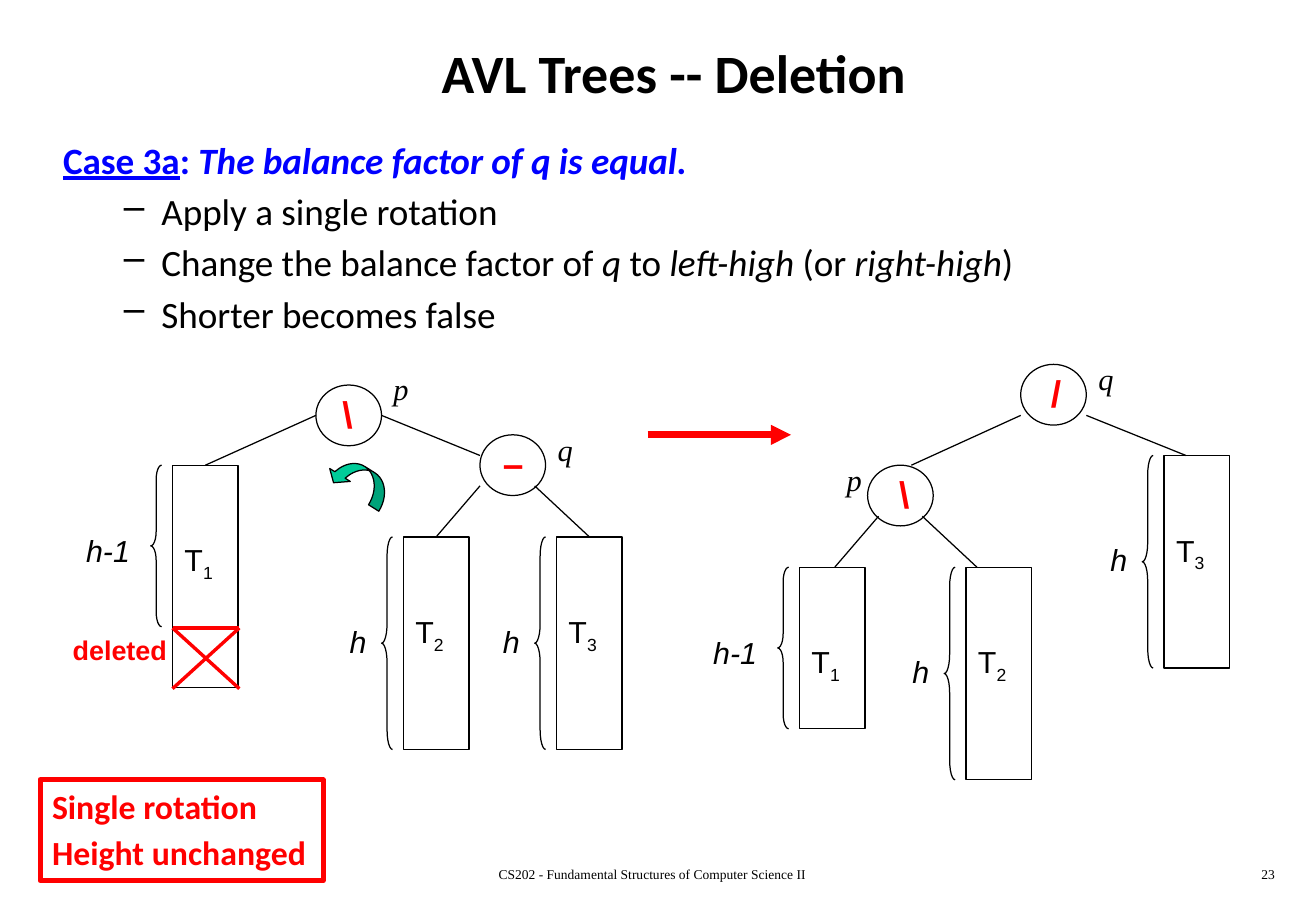
from pptx import Presentation
from pptx.dml.color import RGBColor
from pptx.enum.shapes import MSO_CONNECTOR, MSO_SHAPE
from pptx.enum.text import MSO_ANCHOR, PP_ALIGN
from pptx.oxml.ns import qn
from pptx.util import Inches, Pt
from lxml import etree

BLACK = RGBColor(0x00, 0x00, 0x00)
WHITE = RGBColor(0xFF, 0xFF, 0xFF)
RED = RGBColor(0xFF, 0x00, 0x00)
BLUE = RGBColor(0x00, 0x00, 0xFF)
GREEN = RGBColor(0x00, 0xCC, 0x99)

STRAIGHT = MSO_CONNECTOR.STRAIGHT
RECTANGLE = MSO_SHAPE.RECTANGLE
ELLIPSE = MSO_SHAPE.OVAL
LEFT_BRACE = MSO_SHAPE.LEFT_BRACE
CURVED_ARROW = MSO_SHAPE.CURVED_LEFT_ARROW
TOP, MIDDLE = MSO_ANCHOR.TOP, MSO_ANCHOR.MIDDLE
LEFT, CENTER, RIGHT = PP_ALIGN.LEFT, PP_ALIGN.CENTER, PP_ALIGN.RIGHT

BOX_WIDTH = 0.54
TITLE_ONLY = 5


def format_font(font, size, name="Calibri", color=BLACK, bold=False, italic=False):
    font.size = Pt(size)
    font.name = name
    font.color.rgb = color
    font.bold = bold
    font.italic = italic


def add_text(slide, left, top, width, height, text, size, name="Arial",
             color=BLACK, bold=False, italic=False, align=LEFT):
    text_box = slide.shapes.add_textbox(
        Inches(left), Inches(top), Inches(width), Inches(height))
    text_box.text_frame.word_wrap = True
    paragraph = text_box.text_frame.paragraphs[0]
    paragraph.text = text
    paragraph.alignment = align
    format_font(paragraph.runs[0].font, size, name, color, bold, italic)
    return paragraph


def add_shape(slide, kind, left, top, width, height, fill=None, color=BLACK, weight=0.75):
    shape = slide.shapes.add_shape(
        kind, Inches(left), Inches(top), Inches(width), Inches(height))
    shape.shadow.inherit = False
    if fill is None:
        shape.fill.background()
    else:
        shape.fill.solid()
        shape.fill.fore_color.rgb = fill
    shape.line.color.rgb = color
    shape.line.width = Pt(weight)
    return shape


def add_line(slide, start_x, start_y, end_x, end_y, color=BLACK, weight=0.75, arrow=False):
    connector = slide.shapes.add_connector(
        STRAIGHT, Inches(start_x), Inches(start_y), Inches(end_x), Inches(end_y))
    connector.line.color.rgb = color
    connector.line.width = Pt(weight)
    if arrow:
        etree.SubElement(connector.line._get_or_add_ln(), qn("a:tailEnd"), type="triangle")
    etree.SubElement(connector._element.spPr, qn("a:effectLst"))


def add_node(slide, left, top, balance, balance_shift, name, name_shift):
    add_shape(slide, ELLIPSE, left, top, BOX_WIDTH, 0.5)
    add_text(slide, left + balance_shift, top, 0.45, 0.47, balance, 22, color=RED, bold=True)
    shift_x, shift_y = name_shift
    add_text(slide, left + shift_x, top + shift_y, 0.63, 0.4, name, 18,
             "Times New Roman", italic=True)


def add_subtree(slide, left, top, number, height_name, extra=0):
    is_short = height_name == "h-1"
    height = 1.33 if is_short else 1.75
    add_shape(slide, RECTANGLE, left, top, BOX_WIDTH, height + extra)
    brace = add_shape(slide, LEFT_BRACE, left - 0.18, top, 0.09, height)
    brace.adjustments[0] = height
    label = add_text(slide, left, top + 0.58, BOX_WIDTH, 0.4, "T", 18)
    subscript = label.add_run()
    subscript.text = number
    format_font(subscript.font, 18, "Arial")
    subscript._r.get_or_add_rPr().set("baseline", "-25000")
    shift_x, shift_y, width = (0.81, 0.5, 0.99) if is_short else (0.54, 0.66, 0.54)
    add_text(slide, left - shift_x, top + shift_y, width, 0.4, height_name, 18, italic=True)


def add_title(slide):
    title = slide.shapes.title
    title.left, title.top = Inches(0.42), Inches(0.17)
    title.width, title.height = Inches(10.25), Inches(0.84)
    title.text_frame.text = "AVL Trees -- Deletion"
    title.text_frame.vertical_anchor = MIDDLE
    paragraph = title.text_frame.paragraphs[0]
    paragraph.alignment = CENTER
    format_font(paragraph.runs[0].font, 32, bold=True)


def add_bullet(paragraph):
    properties = paragraph._p.get_or_add_pPr()
    properties.set("marL", str(Inches(0.81)))
    properties.set("indent", str(Inches(-0.31)))
    etree.SubElement(properties, qn("a:buChar"), char="–")


def add_body(slide):
    heading = add_text(slide, 0.42, 1.08, 9.08, 1.75, "Case 3a", 22, "Calibri", BLUE, True)
    heading.runs[0].font.underline = True
    for text, italic in ((": ", False), ("The balance factor of q is equal.", True)):
        run = heading.add_run()
        run.text = text
        format_font(run.font, 22, color=BLUE, bold=True, italic=italic)
    steps = (
        ("Apply a single rotation",),
        ("Change the balance factor of ", "q ", "to ", "left-high", " (or ", "right-high", ")"),
        ("Shorter becomes false",),
    )
    for step in steps:
        paragraph = heading._parent.add_paragraph()
        paragraph.space_before = Pt(4)
        add_bullet(paragraph)
        for index, text in enumerate(step):
            run = paragraph.add_run()
            run.text = text
            format_font(run.font, 22, italic=index % 2 == 1)


def add_result_box(slide):
    box = add_shape(slide, RECTANGLE, 0.33, 6.42, 2.33, 0.83, WHITE, RED, 3)
    box.text_frame.text = "Single rotation\nHeight unchanged"
    box.text_frame.vertical_anchor = TOP
    for paragraph in box.text_frame.paragraphs:
        paragraph.alignment = LEFT
        format_font(paragraph.runs[0].font, 20, color=RED, bold=True)
    box.text_frame.paragraphs[1].space_before = Pt(3.5)


def add_rotation_arrow(slide):
    arrow = add_shape(slide, CURVED_ARROW, 2.83, 3.69, 0.25, 0.54, GREEN)
    for index, value in enumerate((0.4, 0.8, 0.33)):
        arrow.adjustments[index] = value
    arrow.rotation = 302.2
    arrow._element.spPr.find(qn("a:xfrm")).set("flipV", "1")


def add_tree_before(slide):
    add_node(slide, 2.6, 3.17, "\\", 0.12, "p", (0.54, -0.17))
    add_node(slide, 3.95, 3.58, "–", 0.09, "q", (0.54, -0.08))
    add_subtree(slide, 1.42, 3.83, "1", "h-1", extra=0.5)
    add_subtree(slide, 3.32, 4.42, "2", "h")
    add_subtree(slide, 4.58, 4.42, "3", "h")
    for edge in ((2.6, 3.42, 1.69, 3.83), (3.14, 3.42, 3.95, 3.75),
                 (3.95, 4, 3.59, 4.42), (4.4, 4, 4.85, 4.42)):
        add_line(slide, *edge)
    for start_y, end_y in ((5.17, 5.17), (5.17, 5.67), (5.67, 5.17)):
        add_line(slide, 1.42, start_y, 1.97, end_y, RED, 2)
    add_text(slide, 0.5, 5.17, 1.26, 0.37, "deleted", 16, color=RED, bold=True)
    add_rotation_arrow(slide)


def add_tree_after(slide):
    add_node(slide, 8.4, 3, "/", 0.15, "q", (0.54, -0.08))
    add_node(slide, 7.14, 3.83, "\\", 0.16, "p", (-0.27, -0.08))
    add_subtree(slide, 6.58, 4.67, "1", "h-1")
    add_subtree(slide, 7.95, 4.67, "2", "h")
    add_subtree(slide, 9.58, 3.75, "3", "h")
    for edge in ((8.4, 3.42, 7.5, 3.83), (8.94, 3.42, 9.76, 3.75),
                 (7.23, 4.25, 6.87, 4.67), (7.59, 4.25, 8.04, 4.67)):
        add_line(slide, *edge)


def main():
    presentation = Presentation()
    presentation.slide_width, presentation.slide_height = Inches(10.83), Inches(7.5)
    slide = presentation.slides.add_slide(presentation.slide_layouts[TITLE_ONLY])
    add_title(slide)
    add_body(slide)
    add_text(slide, 3.34, 7.08, 4.06, 0.25,
             "CS202 - Fundamental Structures of Computer Science II", 8,
             "Times New Roman", align=CENTER)
    add_text(slide, 8.33, 7.08, 2.26, 0.25, "23", 8, "Times New Roman", align=RIGHT)
    add_result_box(slide)
    add_tree_before(slide)
    add_line(slide, 5.33, 3.58, 6.51, 3.58, RED, 4, arrow=True)
    add_tree_after(slide)
    presentation.save("out.pptx")


if __name__ == "__main__":
    main()
